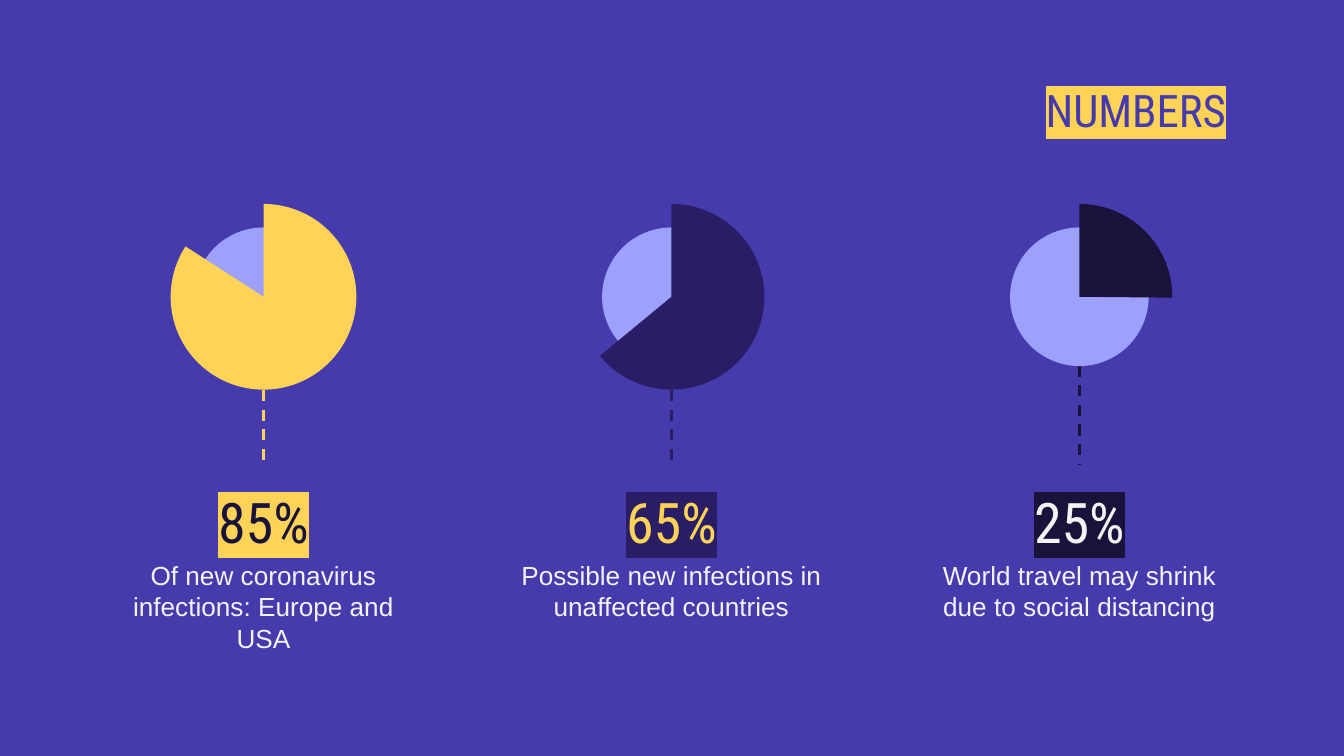
from lxml.etree import SubElement
from pptx import Presentation
from pptx.dml.color import RGBColor
from pptx.enum.dml import MSO_LINE as Dash
from pptx.enum.shapes import MSO_CONNECTOR as Link, MSO_SHAPE as Kind
from pptx.enum.text import MSO_ANCHOR as Anchor, MSO_AUTO_SIZE as Fit, PP_ALIGN as Align
from pptx.oxml.ns import qn
from pptx.util import Cm, Pt

BLUE, GOLD, LILAC = "453BAD", "FFD357", "9DA1FD"
PLUM, NIGHT, PALE = "291E66", "19133B", "F3F3F3"
HEAD, BODY = "Roboto Condensed", "Arial"

FIRST, STEP = 4.98, 7.71  # centre of the first column, gap between centres
MID, DISC, PIE = 5.61, 2.62, 3.51  # centre height and diameters of the pies
FOOT = 8.79  # end of the dashed lines

# share, wedge colour, number colour, wedge end angle, line top, caption width, caption
STATS = [
    ("85%", GOLD, NIGHT, 32.85, 7.37, 5.97,
     "Of new coronavirus infections: Europe and USA"),
    ("65%", PLUM, GOLD, 320.49, 7.37, 6.32,
     "Possible new infections in unaffected countries"),
    ("25%", NIGHT, PALE, 180.51, 6.91, 5.97,
     "World travel may shrink due to social distancing"),
]


def paint(color, tone):
    color.rgb = RGBColor.from_string(tone)


def mark(run, tone):
    """Put a highlight colour behind a run."""
    light = SubElement(run._r.get_or_add_rPr(), qn("a:highlight"))
    SubElement(light, qn("a:srgbClr"), val=tone)


def write(box, text, face, size, tone, align, pads, anchor=Anchor.TOP, back=None):
    """Fill a box with one paragraph; pads are side, top and bottom in cm."""
    frame = box.text_frame
    frame.word_wrap = True
    frame.auto_size = Fit.NONE
    frame.vertical_anchor = anchor
    side, top, base = map(Cm, pads)
    frame.margin_left = frame.margin_right = side
    frame.margin_top, frame.margin_bottom = top, base
    para = frame.paragraphs[0]
    para.alignment = align
    para.font.name, para.font.size = face, Pt(size)
    para.font.bold = False
    paint(para.font.color, tone)
    run = para.add_run()
    run.text = text
    if back:
        para.line_spacing = 1.1
        mark(run, back)


def add_title(slide, text):
    box = slide.shapes.title
    box.left, box.top, box.width, box.height = map(Cm, (12.7, 1.22, 10.72, 2.51))
    write(box, text, HEAD, 24, BLUE, Align.RIGHT, (0.25, 0.25, 0.25), back=GOLD)


def add_round(slide, kind, mid, size, tone):
    """Add a round shape centred on the row of pies."""
    shape = slide.shapes.add_shape(
        kind, Cm(mid - size / 2), Cm(MID - size / 2), Cm(size), Cm(size))
    shape.shadow.inherit = False
    shape.fill.solid()
    paint(shape.fill.fore_color, tone)
    shape.line.fill.background()
    return shape


def add_pie(slide, mid, end, tone):
    add_round(slide, Kind.OVAL, mid, DISC, LILAC)
    pie = add_round(slide, Kind.PIE, mid, PIE, tone)
    pie.rotation = 180
    for i, angle in enumerate((90, end)):
        pie.adjustments[i] = angle * 0.6  # 60000 units a degree, scaled by 100000


def add_dash(slide, mid, top, tone):
    line = slide.shapes.add_connector(
        Link.STRAIGHT, Cm(mid), Cm(top), Cm(mid), Cm(FOOT))
    line.line.width = Pt(1.5)
    line.line.dash_style = Dash.DASH
    paint(line.line.color, tone)
    SubElement(line._element.spPr, qn("a:effectLst"))


def add_label(slide, mid, top, width, height, *style, **more):
    box = slide.shapes.add_textbox(
        Cm(mid - width / 2), Cm(top), Cm(width), Cm(height))
    write(box, *style, **more)


def add_stat(slide, mid, stat):
    share, tone, ink, end, top, width, text = stat
    add_dash(slide, mid, top, tone)
    add_pie(slide, mid, end, tone)
    add_label(slide, mid, FOOT, 3.71, 1.5, share, HEAD, 30, ink, Align.CENTER,
              (0.25, 0.51, 0), anchor=Anchor.MIDDLE, back=tone)
    add_label(slide, mid, 10.11, width, 2.11, text, BODY, 14, PALE, Align.CENTER,
              (0.25, 0.46, 0))


def main():
    deck = Presentation()
    deck.slide_width, deck.slide_height = Cm(25.4), Cm(14.29)
    slide = deck.slides.add_slide(deck.slide_layouts[5])
    slide.background.fill.solid()
    paint(slide.background.fill.fore_color, BLUE)
    add_title(slide, "NUMBERS")
    for i, stat in enumerate(STATS):
        add_stat(slide, FIRST + i * STEP, stat)
    deck.save("out.pptx")


if __name__ == "__main__":
    main()
